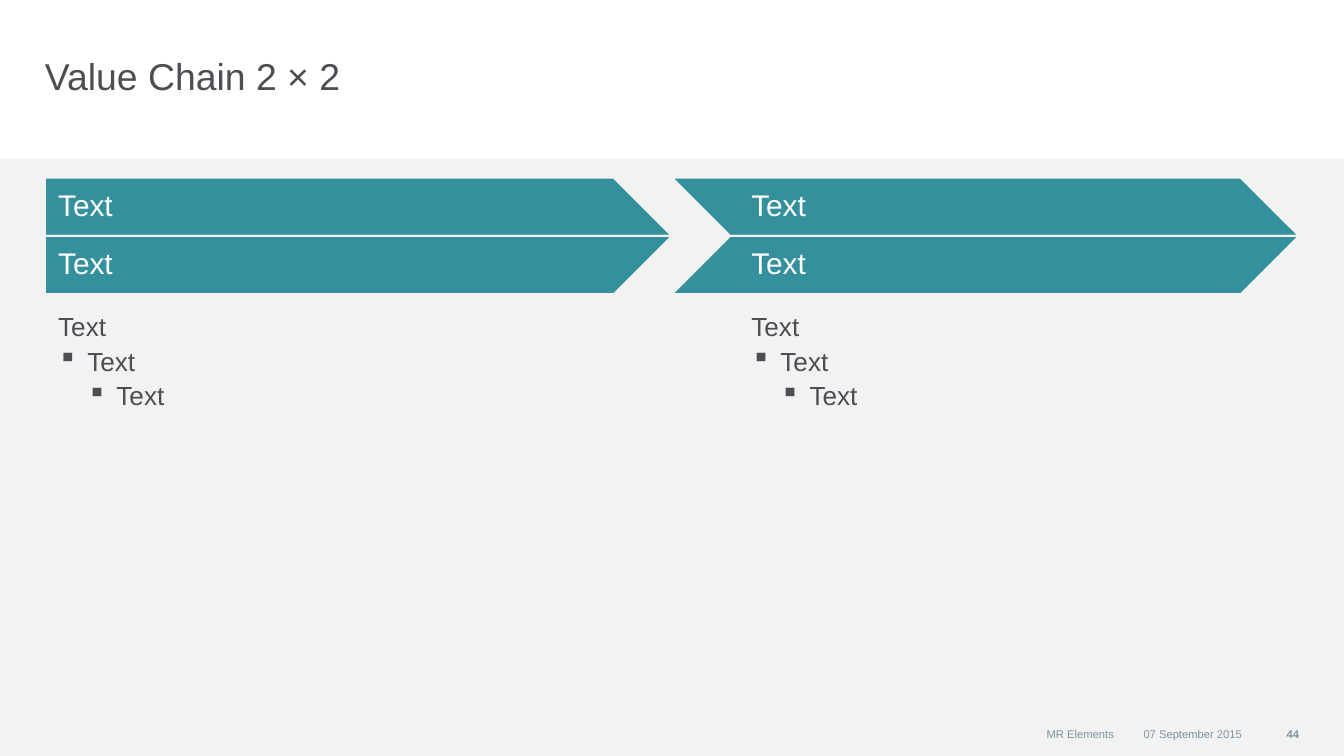
"""Build a slide with a two by two value chain."""
from lxml import etree
from pptx import Presentation
from pptx.dml.color import RGBColor
from pptx.enum.shapes import MSO_SHAPE
from pptx.enum.text import MSO_ANCHOR, PP_ALIGN
from pptx.oxml.ns import qn
from pptx.util import Cm, Pt

RECTANGLE = MSO_SHAPE.RECTANGLE
TOP, MIDDLE = MSO_ANCHOR.TOP, MSO_ANCHOR.MIDDLE
LEFT, RIGHT = PP_ALIGN.LEFT, PP_ALIGN.RIGHT

WHITE = RGBColor(0xFF, 0xFF, 0xFF)
PALE_GREY = RGBColor(0xF2, 0xF2, 0xF2)
DARK_GREY = RGBColor(0x4D, 0x4E, 0x53)
TEAL = RGBColor(0x34, 0x90, 0x9C)
BLUE_GREY = RGBColor(0x7A, 0x94, 0xA3)

SLIDE_WIDTH, SLIDE_HEIGHT = 25.4, 14.29
MARGIN = 0.85
COLUMN_WIDTH = 11.85
CHAIN_TOP = 3.36
ROW_HEIGHT = 1.1
INDENT = 0.55

TITLE_FONT = {"name": "Arial", "size": Pt(20), "color": DARK_GREY}
BODY_FONT = {"name": "Arial", "size": Pt(14), "color": DARK_GREY}
ARROW_FONT = {"name": "Arial", "size": Pt(16), "color": WHITE}
FOOTER_FONT = {"name": "Arial", "size": Pt(6), "color": BLUE_GREY}
PAGE_FONT = {**FOOTER_FONT, "bold": True}

COLUMNS = [
    {"headings": ["Text", "Text"], "body": ["Text", "Text", "Text"],
     "notch": 0, "insets": (0.25, 0.25)},
    {"headings": ["Text", "Text"], "body": ["Text", "Text", "Text"],
     "notch": ROW_HEIGHT, "insets": (1.5, 0)},
]
FOOTERS = [
    ("MR Elements", 11.05, 10, FOOTER_FONT),
    ("07 September 2015", 21.16, 2.31, FOOTER_FONT),
    ("44", 23.45, 1.1, PAGE_FONT),
]


def apply_format(target, values):
    """Set each value of a dict as an attribute of the target."""
    for name, value in values.items():
        if name == "color":
            target.color.rgb = value
        else:
            setattr(target, name, value)


def format_frame(frame, anchor, insets=(0, 0), vertical_inset=0):
    """Set wrapping, anchor and insets of a text frame."""
    apply_format(frame, {
        "word_wrap": True, "vertical_anchor": anchor,
        "margin_left": Cm(insets[0]), "margin_right": Cm(insets[1]),
        "margin_top": Cm(vertical_inset), "margin_bottom": Cm(vertical_inset),
    })


def write_paragraph(paragraph, text, font, alignment=LEFT, line_spacing=1.0):
    """Fill a paragraph with one formatted run."""
    apply_format(paragraph, {"alignment": alignment, "line_spacing": line_spacing})
    run = paragraph.add_run()
    run.text = text
    apply_format(run.font, font)


def add_bullet(paragraph, level):
    """Give a paragraph a square bullet and a hanging indent."""
    properties = paragraph._p.get_or_add_pPr()
    properties.set("marL", str(Cm(INDENT * level)))
    properties.set("indent", str(-Cm(INDENT)))
    etree.SubElement(properties, qn("a:buChar")).set("char", "▪")


def add_label(slide, text, box, font, anchor, alignment):
    """Add a text box with one line and no insets."""
    frame = slide.shapes.add_textbox(*map(Cm, box)).text_frame
    format_frame(frame, anchor)
    write_paragraph(frame.paragraphs[0], text, font, alignment)


def add_backdrop(slide):
    """Add the grey area below the title."""
    shape = slide.shapes.add_shape(
        RECTANGLE, 0, Cm(3), Cm(SLIDE_WIDTH), Cm(SLIDE_HEIGHT - 3))
    shape.shadow.inherit = False
    shape.fill.solid()
    shape.fill.fore_color.rgb = PALE_GREY
    shape.line.fill.background()


def add_arrow_half(slide, left, row, column, text):
    """Add the upper or lower half of a chain arrow."""
    outer = CHAIN_TOP + 2 * ROW_HEIGHT * row
    middle = CHAIN_TOP + ROW_HEIGHT
    right = left + COLUMN_WIDTH
    points = [(left, outer), (right - ROW_HEIGHT, outer),
              (right, middle), (left + column["notch"], middle)]
    corners = [(Cm(x), Cm(y)) for x, y in points]
    builder = slide.shapes.build_freeform(*corners[0])
    builder.add_line_segments(corners[1:], close=True)
    shape = builder.convert_to_shape()
    shape.shadow.inherit = False
    shape.fill.solid()
    shape.fill.fore_color.rgb = TEAL
    apply_format(shape.line, {"width": Pt(1), "color": PALE_GREY})
    format_frame(shape.text_frame, MIDDLE, column["insets"])
    write_paragraph(shape.text_frame.paragraphs[0], text, ARROW_FONT, line_spacing=0.9)


def add_body(slide, left, column):
    """Add the text below an arrow, bulleted from the second line on."""
    top = CHAIN_TOP + 2 * ROW_HEIGHT
    frame = slide.shapes.add_textbox(
        Cm(left), Cm(top), Cm(COLUMN_WIDTH), Cm(7.87)).text_frame
    format_frame(frame, TOP, column["insets"], 0.25)
    for level, text in enumerate(column["body"]):
        paragraph = frame.add_paragraph() if level else frame.paragraphs[0]
        if level:
            add_bullet(paragraph, level)
        write_paragraph(paragraph, text, BODY_FONT, line_spacing=1.1)


def main():
    """Build and save the presentation."""
    presentation = Presentation()
    apply_format(presentation, {
        "slide_width": Cm(SLIDE_WIDTH), "slide_height": Cm(SLIDE_HEIGHT)})
    slide = presentation.slides.add_slide(presentation.slide_layouts[6])
    add_backdrop(slide)
    add_label(slide, "Value Chain 2 × 2", (MARGIN, 1, 19, 1.55), TITLE_FONT, TOP, LEFT)
    for index, column in enumerate(COLUMNS):
        left = MARGIN + index * COLUMN_WIDTH
        add_body(slide, left, column)
        for row, heading in enumerate(column["headings"]):
            add_arrow_half(slide, left, row, column, heading)
    for text, left, width, font in FOOTERS:
        add_label(slide, text, (left, 13.6, width, 0.55), font, MIDDLE, RIGHT)
    presentation.save("out.pptx")


if __name__ == "__main__":
    main()
